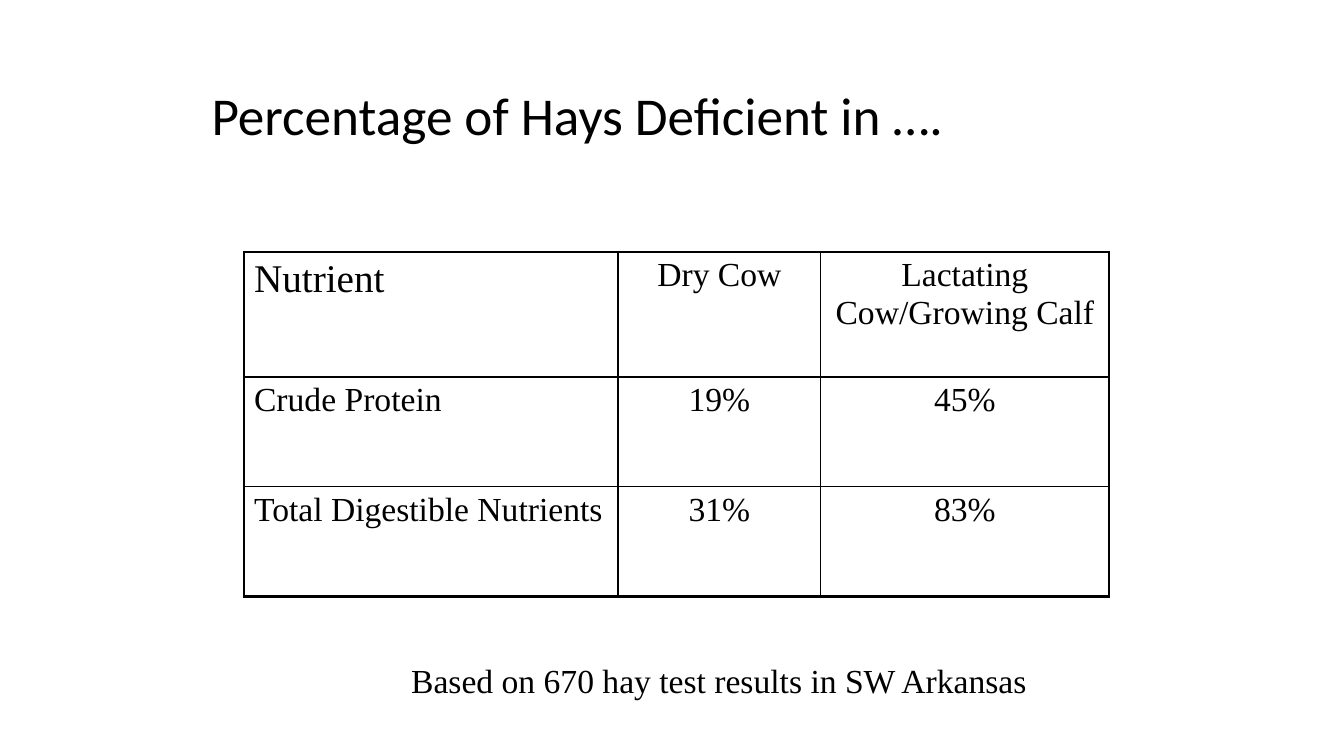
from lxml import etree
from pptx import Presentation
from pptx.dml.color import RGBColor
from pptx.enum.text import MSO_ANCHOR, PP_ALIGN
from pptx.oxml.ns import qn
from pptx.util import Inches, Pt

LEFT, CENTER = PP_ALIGN.LEFT, PP_ALIGN.CENTER
TOP, MIDDLE = MSO_ANCHOR.TOP, MSO_ANCHOR.MIDDLE
SANS, SERIF = "Calibri", "Times New Roman"
BLACK = "000000"
THIN, THICK = 1, 2.25

COLS = [3.71, 2.01, 2.86]
ROWS = [1.24, 1.09, 1.09]
DATA = [
    ["Nutrient", "Dry Cow", "Lactating Cow/Growing Calf"],
    ["Crude Protein", "19%", "45%"],
    ["Total Digestible Nutrients", "31%", "83%"],
]


def color(code):
    return RGBColor.from_string(code)


def add_run(para, text, size, face):
    run = para.add_run()
    run.text = text
    run.font.size = Pt(size)
    run.font.name = face
    run.font.color.rgb = color(BLACK)


def add_text(slide, box, text, size, face, anchor=TOP, spacing=None):
    frame = slide.shapes.add_textbox(*map(Inches, box)).text_frame
    frame.word_wrap = True
    frame.vertical_anchor = anchor
    para = frame.paragraphs[0]
    para.line_spacing = spacing
    add_run(para, text, size, face)


def set_edges(cell, widths):
    """Draw the cell's borders; widths maps the sides L, R, T, B to points."""
    props = cell._tc.get_or_add_tcPr()
    for spot, (side, width) in enumerate(widths.items()):
        line = etree.Element(qn(f"a:ln{side}"), w=str(Pt(width)))
        fill = etree.SubElement(line, qn("a:solidFill"))
        etree.SubElement(fill, qn("a:srgbClr"), val=BLACK)
        props.insert(spot, line)


def add_grid(slide, left, top):
    frame = slide.shapes.add_table(
        len(ROWS), len(COLS), Inches(left), Inches(top),
        Inches(sum(COLS)), Inches(sum(ROWS)))
    table = frame.table
    table.first_row = table.horz_banding = False
    for col, width in zip(table.columns, COLS):
        col.width = Inches(width)
    for row, height in zip(table.rows, ROWS):
        row.height = Inches(height)

    last = len(ROWS) - 1
    for r, texts in enumerate(DATA):
        for c, text in enumerate(texts):
            cell = table.cell(r, c)
            cell.fill.background()
            para = cell.text_frame.paragraphs[0]
            para.alignment = CENTER if c else LEFT
            add_run(para, text, 24 if r or c else 28, SERIF)
            # Thick outer edges, except on the right
            set_edges(cell, {
                "L": THIN if c else THICK,
                "R": THIN,
                "T": THIN if r else THICK,
                "B": THICK if r == last else THIN,
            })


def main():
    deck = Presentation()
    deck.slide_width, deck.slide_height = Inches(13.33), Inches(7.5)
    slide = deck.slides.add_slide(deck.slide_layouts[6])

    # Title
    add_text(slide, (2, 0.67, 9.5, 1), "Percentage of Hays Deficient in ….",
             38, SANS, MIDDLE, 0.9)
    # Deficiency table
    add_grid(slide, 2.42, 2.5)
    # Source note
    add_text(slide, (3.98, 6.5, 6.59, 0.5),
             "Based on 670 hay test results in SW Arkansas", 24, SERIF)

    deck.save("out.pptx")


if __name__ == "__main__":
    main()
